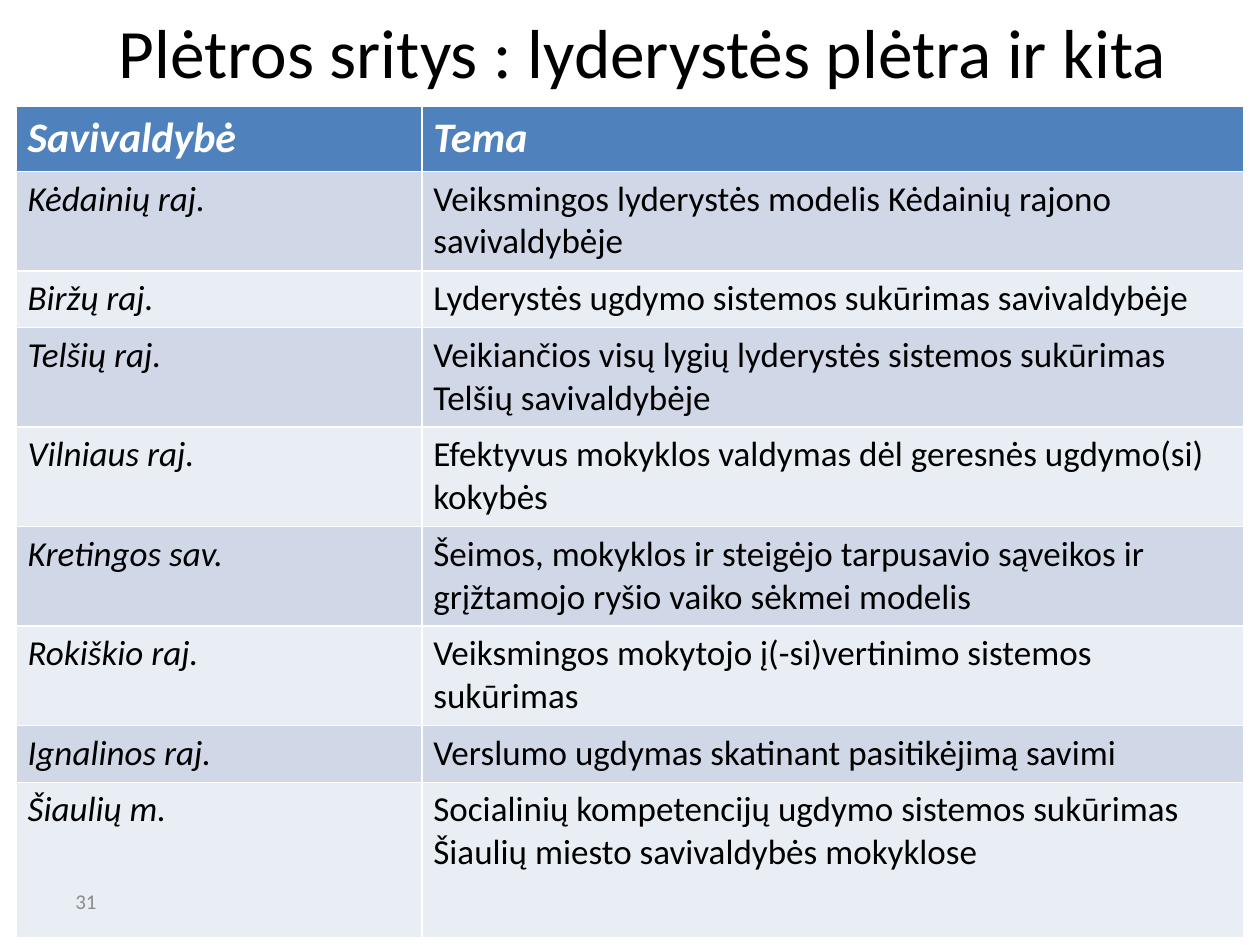
"""Build the slide listing development areas by municipality."""
from pptx import Presentation
from pptx.dml.color import RGBColor as RGB
from pptx.enum.text import MSO_ANCHOR as Anchor, PP_ALIGN as Align
from pptx.util import Inches, Pt


def style(para, size, color, bold=False, italic=False):
    font = para.font
    font.name, font.size = "Calibri", Pt(size)
    font.bold, font.italic = bold, italic
    font.color.rgb = RGB.from_string(color)


def label(text, left, top, width, height, size, color, align):
    box = slide.shapes.add_textbox(*map(Inches, (left, top, width, height)))
    frame = box.text_frame
    frame.word_wrap = True
    frame.vertical_anchor = Anchor.MIDDLE
    para = frame.paragraphs[0]
    para.text, para.alignment = text, align
    style(para, size, color)


deck = Presentation()
deck.slide_width, deck.slide_height = Inches(10), Inches(7.5)
slide = deck.slides.add_slide(deck.slide_layouts[6])

rows = [
    ("Savivaldybė", "Tema", 0.52),
    ("Kėdainių raj.", "Veiksmingos lyderystės modelis Kėdainių rajono savivaldybėje", 0.79),
    ("Biržų raj.", "Lyderystės ugdymo sistemos sukūrimas savivaldybėje", 0.45),
    ("Telšių raj.", "Veikiančios visų lygių lyderystės sistemos sukūrimas Telšių savivaldybėje", 0.79),
    ("Vilniaus raj.", "Efektyvus mokyklos valdymas dėl geresnės ugdymo(si) kokybės", 0.79),
    ("Kretingos sav.", "Šeimos, mokyklos ir steigėjo tarpusavio sąveikos ir grįžtamojo ryšio vaiko sėkmei modelis", 0.79),
    ("Rokiškio raj.", "Veiksmingos mokytojo į(-si)vertinimo sistemos sukūrimas", 0.79),
    ("Ignalinos raj.", "Verslumo ugdymas skatinant pasitikėjimą savimi", 0.45),
    ("Šiaulių m.", "Socialinių kompetencijų ugdymo sistemos sukūrimas Šiaulių miesto savivaldybės mokyklose", 1.23),
]
frame = slide.shapes.add_table(
    len(rows), 2, Inches(0.13), Inches(0.84), Inches(9.74), Inches(6.59))
table = frame.table
for col, width in zip(table.columns, (3.22, 6.52)):
    col.width = Inches(width)

for r, (*texts, height) in enumerate(rows):
    table.rows[r].height = Inches(height)
    head = r == 0
    fill = "4F81BD" if head else ("E9EDF4", "D0D8E8")[r % 2]
    for c, text in enumerate(texts):
        cell = table.cell(r, c)
        cell.fill.solid()
        cell.fill.fore_color.rgb = RGB.from_string(fill)
        cell.margin_left = cell.margin_right = Inches(0.09)
        cell.margin_top = cell.margin_bottom = Inches(0.05)
        cell.text = text
        para = cell.text_frame.paragraphs[0]
        style(para, 24 if head else 20, "FFFFFF" if head else "000000",
              bold=head, italic=head or c == 0)

label("Plėtros sritys : lyderystės plėtra ir kita",
      0.2, 0.13, 9.8, 0.55, 39.6, "000000", Align.CENTER)
label("31", 0.5, 6.95, 2.33, 0.4, 12, "8C8C8C", Align.LEFT)

deck.save("out.pptx")
